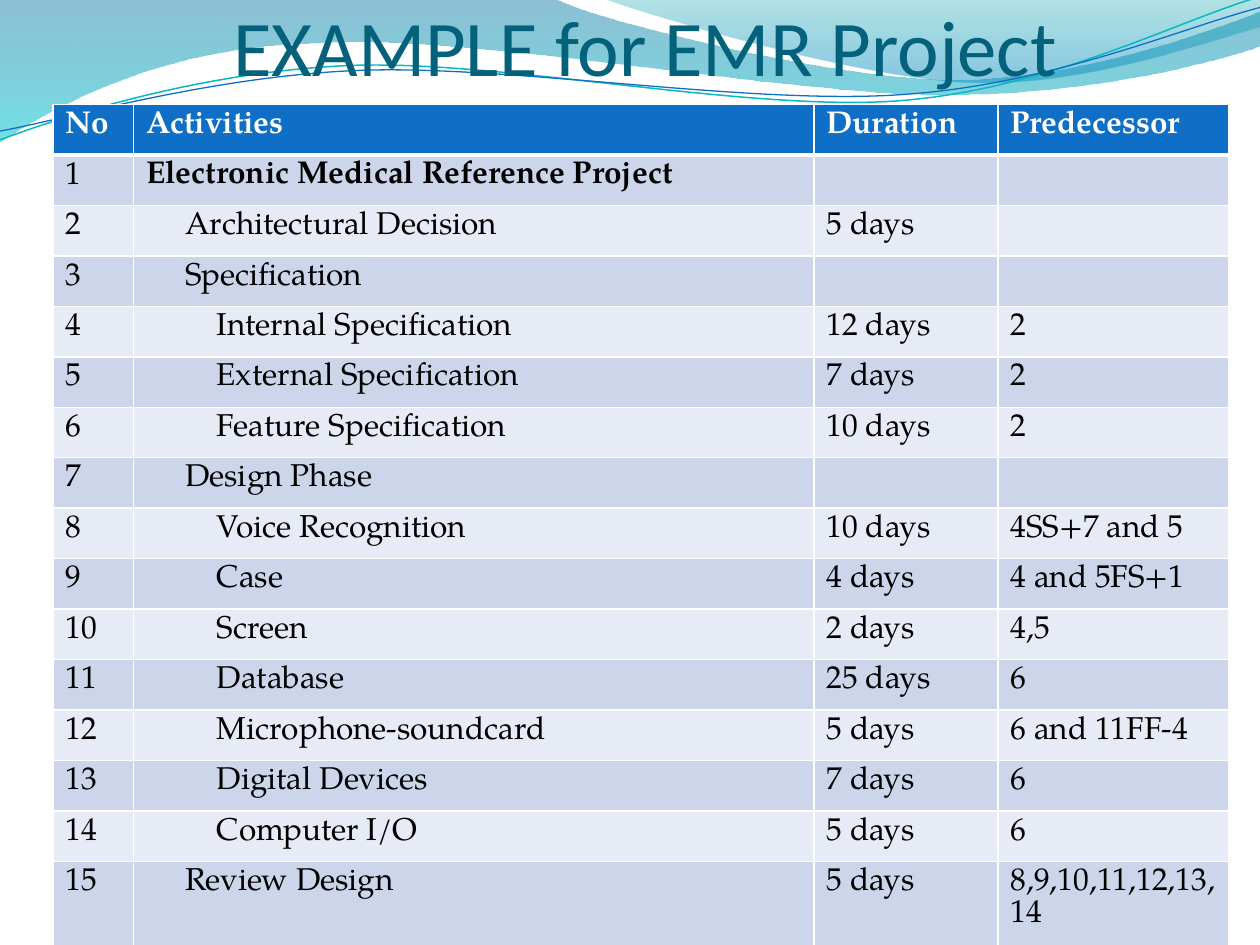
import math

from lxml import etree
from pptx import Presentation
from pptx import util as u
from pptx.dml.color import RGBColor
from pptx.enum import text
from pptx.oxml import ns

WHITE, BLACK, BLUE, TEAL = "FFFFFF", "000000", "0F6FC6", "04617B"
BANDS = ("CCD5EA", "E7EBF5")
BODY_FONT = "TeX Gyre Pagella"
INDENTS = (0, 0.31, 0.56)
COLUMN_WIDTHS = (0.64, 5.4, 1.46, 1.83)
HEADINGS = ("No", "Activities", "Duration", "Predecessor")
# Outline level, activity, duration, predecessor
ACTIVITIES = (
    (0, "Electronic Medical Reference Project", "", ""),
    (1, "Architectural Decision", "5 days", ""),
    (1, "Specification", "", ""),
    (2, "Internal Specification", "12 days", "2"),
    (2, "External Specification", "7 days", "2"),
    (2, "Feature Specification", "10 days", "2"),
    (1, "Design Phase", "", ""),
    (2, "Voice Recognition", "10 days", "4SS+7 and 5"),
    (2, "Case", "4 days", "4 and 5FS+1"),
    (2, "Screen", "2 days", "4,5"),
    (2, "Database", "25 days", "6"),
    (2, "Microphone-soundcard", "5 days", "6 and 11FF-4"),
    (2, "Digital Devices", "7 days", "6"),
    (2, "Computer I/O", "5 days", "6"),
    (1, "Review Design", "5 days", "8,9,10,11,12,13,14"),
)

# Each outline is a run of segments: 2 numbers for a line, 6 for a Bézier curve
LEFT_WAVE = (
    (0, 0), (4.4, -0.01),
    (4.76, 0.17, 6.64, 0.63, 7.58, 0.63), (8.53, 0.63, 9.58, 0.26, 10, 0.09),
    (10.01, 0.36),
    (9.83, 0.44, 8.7, 0.76, 7.46, 0.75), (6.22, 0.75, 3.82, 0.28, 2.57, 0.34),
    (1.29, 0.36, 0.46, 0.83, -0.01, 1.13),
)
RIGHT_WAVE = (
    (4.79, -0.01),
    (5.09, 0.11, 6.82, 0.62, 7.69, 0.65), (8.56, 0.69, 9.61, 0.32, 10, 0.21),
    (10, 0),
)
CYAN_CURVE = (
    (0, 1.11),
    (0.48, 0.93, 1.58, 0.57, 2.77, 0.52), (3.95, 0.47, 5.93, 0.89, 7.13, 0.8),
    (8.33, 0.71, 9.38, 0.15, 9.98, -0.02),
)
BLUE_CURVE = (
    (0, 1.04),
    (0.47, 0.96, 1.64, 0.61, 2.83, 0.56), (4.03, 0.51, 5.97, 0.84, 7.17, 0.75),
    (8.36, 0.67, 9.41, 0.21, 10, 0.06),
)
CURVE_TILT = -2.7


def color(value):
    return RGBColor.from_string(value)


def turn(point, center, degrees):
    angle = math.radians(degrees)
    x, y = point[0] - center[0], point[1] - center[1]
    return (center[0] + x * math.cos(angle) - y * math.sin(angle),
            center[1] + x * math.sin(angle) + y * math.cos(angle))


def add_outline(page, outline, close, tilt=0, center=(0, 0)):
    """Add a freeform, turned by tilt degrees, whose 6-number segments are curves."""
    points = [turn(pair, center, -tilt) for segment in outline
              for pair in zip(segment[::2], segment[1::2])]
    start, *rest = [(u.Inches(x), u.Inches(y)) for x, y in points]
    builder = page.shapes.build_freeform(*start)
    builder.add_line_segments(rest, close=close)
    shape = builder.convert_to_shape()
    shape.shadow.inherit = False
    shape.rotation = tilt % 360

    lines = iter(list(shape._element.spPr.iter(ns.qn("a:lnTo"))))
    for segment in outline[1:]:
        first = next(lines)
        if len(segment) == 6:
            first.tag = ns.qn("a:cubicBezTo")
            for line in (next(lines), next(lines)):
                first.append(line[0])
                line.getparent().remove(line)
    return shape


def add_wave(page, outline, stops):
    """Add a filled wave; stops are (position, colour, opacity percent)."""
    wave = add_outline(page, outline, True)
    wave.line.fill.background()
    wave.fill.gradient()
    wave.fill.gradient_angle = 270
    for stop, (position, value, _) in zip(wave.fill.gradient_stops, stops):
        stop.position = position
        stop.color.rgb = color(value)
    values = wave._element.spPr.iter(ns.qn("a:srgbClr"))
    for element, (_, _, opacity) in zip(values, stops):
        etree.SubElement(element, ns.qn("a:alpha"), val=str(opacity * 1000))


def add_curve(page, outline, center, value, width):
    curve = add_outline(page, outline, False, CURVE_TILT, center)
    curve.fill.background()
    curve.line.color.rgb = color(value)
    curve.line.width = u.Pt(width)


def add_backdrop(page):
    add_wave(page, LEFT_WAVE, ((0, "0074A1", 45), (1, "00C6CF", 55)))
    add_wave(page, RIGHT_WAVE, ((0, "00A1A9", 30), (0.8, "008BBF", 45)))
    add_curve(page, CYAN_CURVE, (4.99, 0.58), "0AB8BF", 0.85)
    add_curve(page, BLUE_CURVE, (5, 0.59), BLUE, 0.75)


def style_font(font, name, size, value, bold=False):
    font.name = name
    font.size = u.Pt(size)
    font.bold = bold
    font.color.rgb = color(value)


def add_title(page, left, top, width, height):
    box = page.shapes.add_textbox(left, top, width, height)
    frame = box.text_frame
    frame.word_wrap = True
    frame.vertical_anchor = text.MSO_ANCHOR.BOTTOM
    frame.margin_left = frame.margin_right = frame.margin_bottom = 0
    para = frame.paragraphs[0]
    para.text = "EXAMPLE for EMR Project"
    para.alignment = text.PP_ALIGN.CENTER
    style_font(para.font, "Calibri", 45, TEAL)


def add_borders(cell, top, bottom):
    properties = cell._tc.get_or_add_tcPr()
    for side, width in (("L", 1), ("R", 1), ("T", top), ("B", bottom)):
        line = etree.SubElement(properties, ns.qn(f"a:ln{side}"), w=str(u.Pt(width)))
        fill = etree.SubElement(line, ns.qn("a:solidFill"))
        etree.SubElement(fill, ns.qn("a:srgbClr"), val=WHITE)


def fill_cell(cell, words, row, bold, indent):
    header = row == 0
    add_borders(cell, 3 if row == 1 else 1, 3 if header else 1)
    cell.fill.solid()
    cell.fill.fore_color.rgb = color(BLUE if header else BANDS[(row - 1) % 2])
    para = cell.text_frame.paragraphs[0]
    if not words:
        # An empty cell takes its line height from the end mark
        mark = etree.SubElement(para._p, ns.qn("a:endParaRPr"), sz="1800")
        etree.SubElement(mark, ns.qn("a:latin"), typeface=BODY_FONT)
        return
    para.text = words
    if indent:
        para._p.get_or_add_pPr().set("marL", str(u.Inches(indent)))
    style_font(para.font, BODY_FONT, 18, WHITE if header else BLACK, bold)


def add_activity_table(page, left, top, width, height):
    rows = [(0, HEADINGS)]
    rows += [(level, (str(number), *words))
             for number, (level, *words) in enumerate(ACTIVITIES, 1)]
    frame = page.shapes.add_table(len(rows), len(HEADINGS), left, top, width, height)
    table = frame.table
    table.horz_banding = False
    for column, column_width in zip(table.columns, COLUMN_WIDTHS):
        column.width = u.Inches(column_width)
    for row, (level, entries) in enumerate(rows):
        for column, words in enumerate(entries):
            activity = column == 1
            bold = row == 0 or (activity and level == 0)
            indent = INDENTS[level] if activity else 0
            fill_cell(table.cell(row, column), words, row, bold, indent)


def main():
    deck = Presentation()
    deck.slide_width, deck.slide_height = u.Inches(10), u.Inches(7.5)
    page = deck.slides.add_slide(deck.slide_layouts[6])
    add_backdrop(page)
    add_title(page, u.Inches(0.58), u.Inches(0), u.Inches(9.08), u.Inches(0.73))
    add_activity_table(page, u.Inches(0.42), u.Inches(0.83),
                       u.Inches(9.33), u.Inches(6.29))
    deck.save("out.pptx")


if __name__ == "__main__":
    main()
